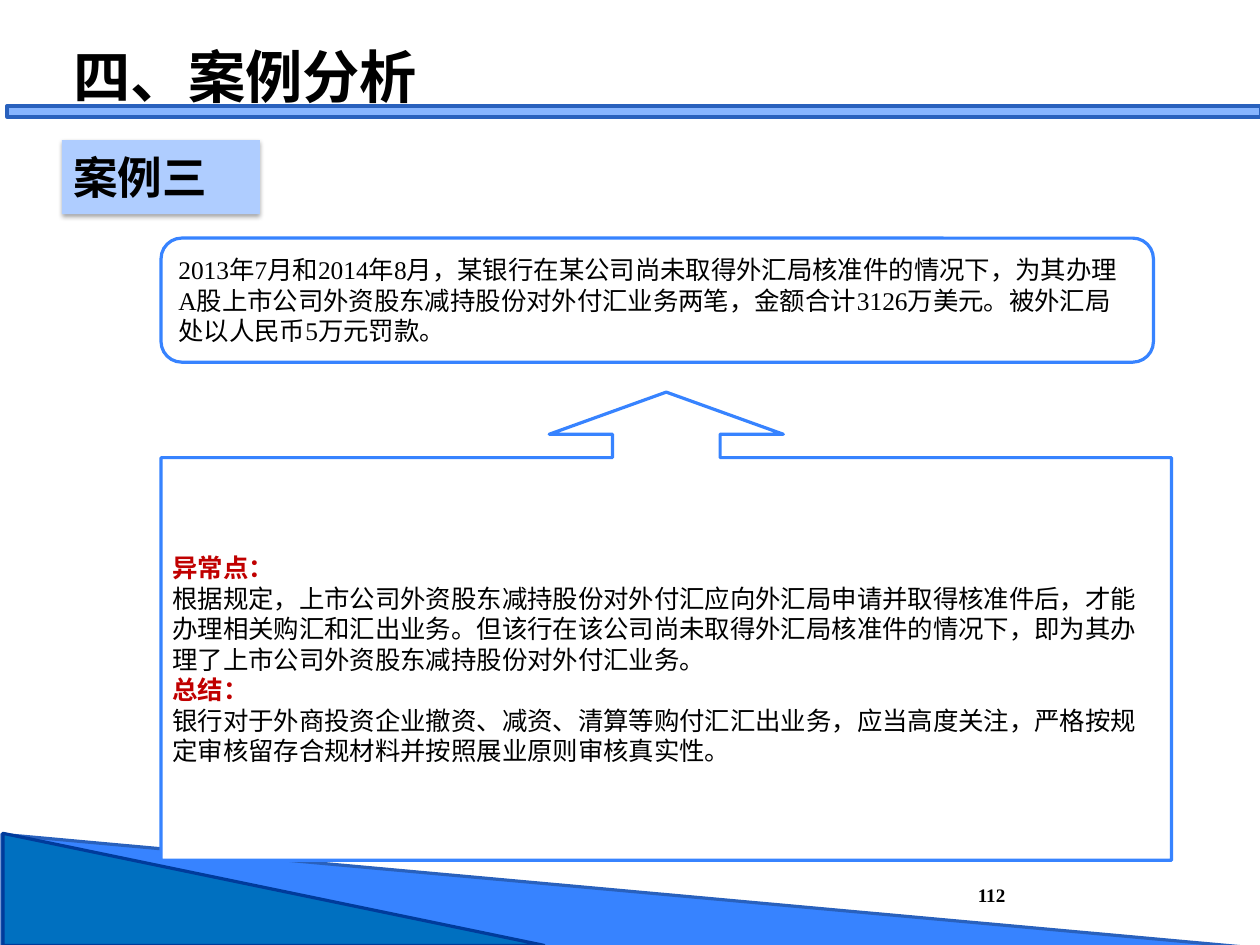
from lxml.etree import SubElement
from pptx import Presentation
from pptx.dml.color import RGBColor
from pptx.enum.shapes import MSO_SHAPE
from pptx.enum.text import MSO_ANCHOR, MSO_AUTO_SIZE, PP_ALIGN
from pptx.oxml.ns import qn
from pptx.util import Inches, Pt

PX = 7986
SANS = "Noto Sans CJK SC"
SERIF = "Times New Roman"

prs = Presentation()
prs.slide_width, prs.slide_height = Inches(11), Inches(8.25)
s = prs.slides.add_slide(prs.slide_layouts[5])


def add_shape(kind, x, y, w, h, fill, line=None):
    sp = s.shapes.add_shape(kind, x * PX, y * PX, w * PX, h * PX)
    sp.fill.solid()
    sp.fill.fore_color.rgb = RGBColor.from_string(fill)
    if line:
        sp.line.color.rgb = RGBColor.from_string(line)
        sp.line.width = Pt(2)
    else:
        sp.line.fill.background()
    sp.shadow.inherit = False
    return sp


def add_text(sp, text, size=16, font=SERIF, color="000000", bold=False,
             align=PP_ALIGN.LEFT, anchor=MSO_ANCHOR.MIDDLE):
    tf = sp.text_frame
    tf.word_wrap = True
    tf.auto_size = MSO_AUTO_SIZE.NONE
    tf.vertical_anchor = anchor
    p = tf.add_paragraph() if tf.text else tf.paragraphs[0]
    p.alignment = align
    r = p.add_run()
    r.text = text
    r.font.size = Pt(size)
    r.font.name = font
    r.font.bold = bold
    r.font.color.rgb = RGBColor.from_string(color)
    SubElement(r.font._element, qn("a:ea")).set("typeface", SANS)


for kind, x, y, w, h, fill, line in [
    (MSO_SHAPE.RIGHT_TRIANGLE, 2, 834, 1257, 114, "3783FF", "2961BD"),
    (MSO_SHAPE.RIGHT_TRIANGLE, 3, 833, 541, 112, "0070C0", "003B9B"),
    (MSO_SHAPE.RECTANGLE, 7, 106, 1253, 11, "87B5FF", "2961BD"),
]:
    add_shape(kind, x, y, w, h, fill, line)

number = s.shapes.add_textbox(954 * PX, 858 * PX, 51 * PX, 48 * PX)
tf = number.text_frame
tf.margin_left = tf.margin_right = tf.margin_top = tf.margin_bottom = 0
add_text(number, "112", size=12, bold=True, align=PP_ALIGN.RIGHT, anchor=MSO_ANCHOR.BOTTOM)

label = add_shape(MSO_SHAPE.RECTANGLE, 62, 140, 198, 74, "AFCDFF")
effects = label._element.spPr.find(qn("a:effectLst"))
shadow = SubElement(effects, qn("a:outerShdw"), blurRad=str(Pt(3.1)), dist=str(Pt(1.8)),
                    dir="5400000", rotWithShape="0")
black = SubElement(shadow, qn("a:srgbClr"), val="000000")
SubElement(black, qn("a:alpha"), val="35000")
add_text(label, "案例三", size=28, font=SANS, bold=True)

title = s.shapes.title
title.left, title.top, title.width, title.height = 62 * PX, 40 * PX, 749 * PX, 72 * PX
add_text(title, "四、案例分析", size=36, font=SANS, bold=True)

case = add_shape(MSO_SHAPE.ROUNDED_RECTANGLE, 161, 238, 992, 124, "FFFFFF", "3783FF")
add_text(case, "2013年7月和2014年8月，某银行在某公司尚未取得外汇局核准件的情况下，为其办理A股上市公司外资股东减持股份对外付汇业务两笔，金额合计3126万美元。被外汇局处以人民币5万元罚款。")

callout = add_shape(MSO_SHAPE.UP_ARROW_CALLOUT, 161, 392, 1010, 468, "FFFFFF", "3783FF")
for i, value in enumerate([0.23, 0.25, 0.09, 0.86]):
    callout.adjustments[i] = value
for heading, body in [
    ("异常点：", "根据规定，上市公司外资股东减持股份对外付汇应向外汇局申请并取得核准件后，才能办理相关购汇和汇出业务。但该行在该公司尚未取得外汇局核准件的情况下，即为其办理了上市公司外资股东减持股份对外付汇业务。"),
    ("总结：", "银行对于外商投资企业撤资、减资、清算等购付汇汇出业务，应当高度关注，严格按规定审核留存合规材料并按照展业原则审核真实性。"),
]:
    add_text(callout, heading, font=SANS, color="C00000", bold=True)
    add_text(callout, body)

prs.save("out.pptx")
